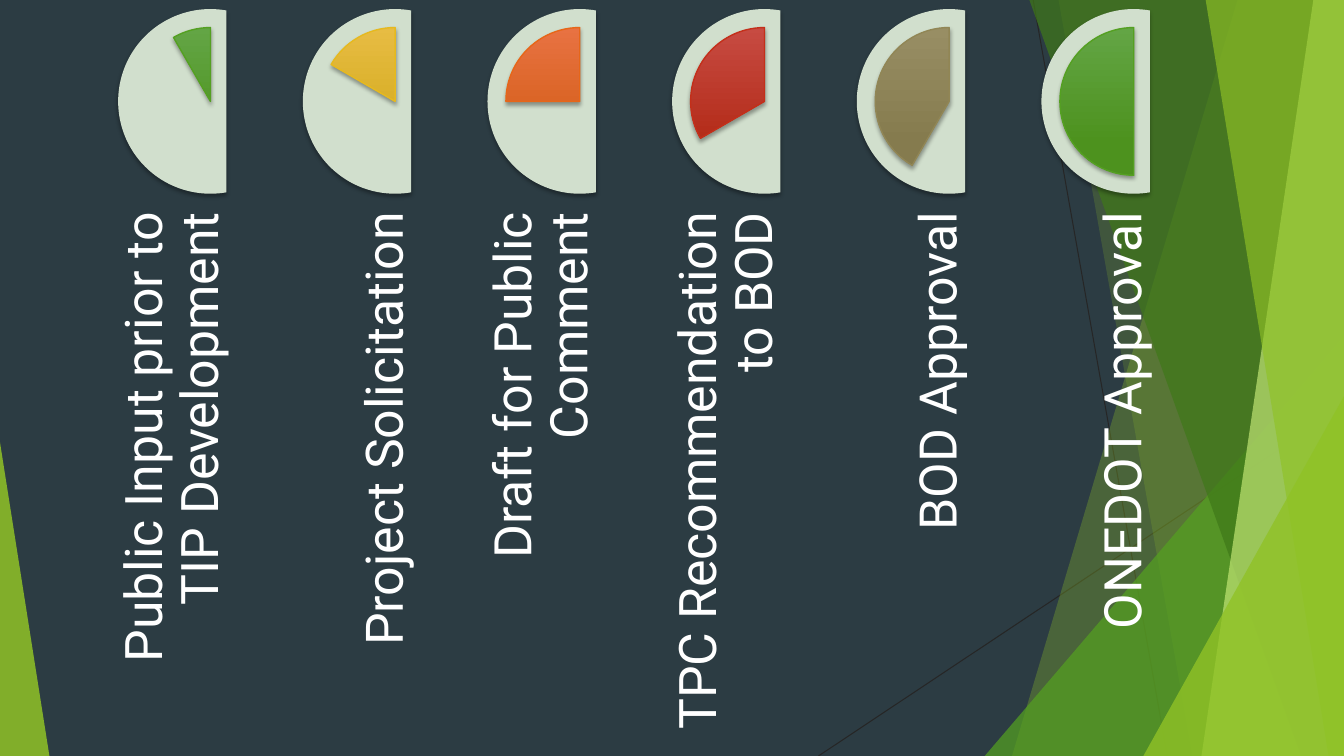
from lxml.etree import SubElement
from pptx import Presentation
from pptx.dml.color import RGBColor
from pptx.enum.shapes import MSO_CONNECTOR, MSO_SHAPE
from pptx.enum.text import MSO_ANCHOR, PP_ALIGN
from pptx.oxml.ns import qn
from pptx.util import Pt

COLORS = {
    "background": "2C3C43", "hairline": "262626", "text": "FFFFFF",
    "lime": "90C226", "green": "54A021", "forest": "3F7819", "pale": "C0E474",
    "dial": "D1DFCD", "shadow": "000000",
}
WEDGES = {
    "green": ("63A545", "4D921E", "54A021"),
    "yellow": ("E7BC43", "D2A91B", "E6B91E"),
    "orange": ("E87242", "D35D16", "E76618"),
    "red": ("C74B42", "B32B18", "C42F1A"),
    "olive": ("988E64", "857B4E", "918655"),
}
STEPS = [
    ("Public Input prior to TIP Development", "green"),
    ("Project Solicitation", "yellow"),
    ("Draft for Public Comment", "orange"),
    ("TPC Recommendation to BOD", "red"),
    ("BOD Approval", "olive"),
    ("ONEDOT Approval", "green"),
]
WIDTH, HEIGHT = 960, 540
BLEED = -0.6
PITCH = 131.9
DIAL_LEFT, DIAL_TOP, DIAL_SIZE = 84.4, 6.5, 131.9
WEDGE_INSET, WEDGE_SIZE = 13.2, 105.5
LABEL_LEFT, LABEL_TOP, LABEL_LENGTH, LABEL_DEPTH = -67, 303.1, 382.3, 79.2
FULL_ANGLE_UNITS = 0.6


def rgb(value):
    return RGBColor.from_string(value)


def write(frame, text, *, font="Roboto", size=37, color=COLORS["text"],
          align=PP_ALIGN.RIGHT, anchor=MSO_ANCHOR.BOTTOM, spacing=0.9):
    frame.word_wrap = True
    frame.vertical_anchor = anchor
    frame.margin_left = frame.margin_right = 0
    frame.margin_top = frame.margin_bottom = 0
    paragraph = frame.paragraphs[0]
    paragraph.alignment = align
    paragraph.line_spacing = spacing
    run = paragraph.add_run()
    run.text = text
    run.font.name = font
    run.font.size = Pt(size)
    run.font.color.rgb = rgb(color)


class ProcessSlide:
    def __init__(self, slide):
        self.shapes = slide.shapes
        slide.background.fill.solid()
        slide.background.fill.fore_color.rgb = rgb(COLORS["background"])

    def hairline(self, x1, y1, x2, y2):
        line = self.shapes.add_connector(
            MSO_CONNECTOR.STRAIGHT, Pt(x1), Pt(y1), Pt(x2), Pt(y2))
        line.line.color.rgb = rgb(COLORS["hairline"])
        line.line.width = Pt(0.75)
        SubElement(line.element.spPr, qn("a:effectLst"))

    def paint(self, shape, color, opacity):
        shape.shadow.inherit = False
        shape.line.fill.background()
        shape.fill.solid()
        shape.fill.fore_color.rgb = rgb(color)
        if opacity < 100:
            tint = shape.element.spPr.find(".//" + qn("a:srgbClr"))
            SubElement(tint, qn("a:alpha"), val=str(opacity * 1000))

    def facet(self, top_left, bottom_left, color, opacity):
        builder = self.shapes.build_freeform(Pt(top_left), Pt(BLEED))
        builder.add_line_segments([
            (Pt(WIDTH), Pt(BLEED)), (Pt(WIDTH), Pt(HEIGHT)), (Pt(bottom_left), Pt(HEIGHT))])
        self.paint(builder.convert_to_shape(), color, opacity)

    def triangle(self, left, top, width, apex, color, opacity):
        shape = self.shapes.add_shape(
            MSO_SHAPE.ISOSCELES_TRIANGLE, Pt(left), Pt(top), Pt(width), Pt(HEIGHT - top))
        shape.adjustments[0] = apex
        self.paint(shape, color, opacity)

    def arc(self, kind, left, top, size, start, end):
        shape = self.shapes.add_shape(kind, Pt(left), Pt(top), Pt(size), Pt(size))
        shape.adjustments[0] = start * FULL_ANGLE_UNITS
        shape.adjustments[1] = end * FULL_ANGLE_UNITS
        return shape

    def drop_shadow(self, shape):
        shape.shadow.inherit = False
        effects = shape.element.spPr.find(qn("a:effectLst"))
        shadow = SubElement(
            effects, qn("a:outerShdw"), blurRad=str(Pt(3)), dist=str(Pt(2)),
            dir="5400000", algn="ctr", rotWithShape="0")
        tint = SubElement(shadow, qn("a:srgbClr"), val=COLORS["shadow"])
        SubElement(tint, qn("a:alpha"), val="35000")

    def dial(self, left):
        dial = self.arc(MSO_SHAPE.CHORD, left, DIAL_TOP, DIAL_SIZE, 80, 280)
        self.paint(dial, COLORS["dial"], 100)
        self.drop_shadow(dial)

    def wedge(self, left, sweep, colors):
        light, dark, edge = colors
        wedge = self.arc(MSO_SHAPE.PIE, left + WEDGE_INSET, DIAL_TOP + WEDGE_INSET,
                         WEDGE_SIZE, 270 - sweep, 270)
        wedge.fill.gradient()
        wedge.fill.gradient_angle = 270
        for stop, color, position in zip(wedge.fill.gradient_stops, (light, dark), (0, 0.78)):
            stop.color.rgb = rgb(color)
            stop.position = position
        wedge.line.color.rgb = rgb(edge)
        wedge.line.width = Pt(1)
        self.drop_shadow(wedge)

    def label(self, left, text):
        label = self.shapes.add_textbox(
            Pt(left), Pt(LABEL_TOP), Pt(LABEL_LENGTH), Pt(LABEL_DEPTH))
        label.rotation = 270
        write(label.text_frame, text)

    def step(self, index, text, wedge_name):
        offset = index * PITCH
        self.dial(DIAL_LEFT + offset)
        self.wedge(DIAL_LEFT + offset, 30 * (index + 1), WEDGES[wedge_name])
        self.label(LABEL_LEFT + offset, text)

    def backdrop(self):
        lime, green = COLORS["lime"], COLORS["green"]
        self.hairline(738, 0, 833.8, HEIGHT)
        self.hairline(WIDTH, 290.2, 584.6, HEIGHT)
        self.facet(884.2, 722.9, lime, 30)
        self.facet(756, 851.8, lime, 20)
        self.triangle(703.4, 240, 256.6, 1, green, 72)
        self.facet(735.1, 929.5, COLORS["forest"], 70)
        self.facet(938.2, 858.2, COLORS["pale"], 70)
        self.facet(861.1, 949, lime, 65)
        self.triangle(816.7, 283, 143.3, 1, lime, 80)
        self.triangle(0, 316, 35.3, 0, lime, 85)


def main():
    deck = Presentation()
    deck.slide_width, deck.slide_height = Pt(WIDTH), Pt(HEIGHT)
    process = ProcessSlide(deck.slides.add_slide(deck.slide_layouts[6]))
    process.backdrop()
    for index, (text, wedge_name) in enumerate(STEPS):
        process.step(index, text, wedge_name)
    deck.save("out.pptx")


if __name__ == "__main__":
    main()
